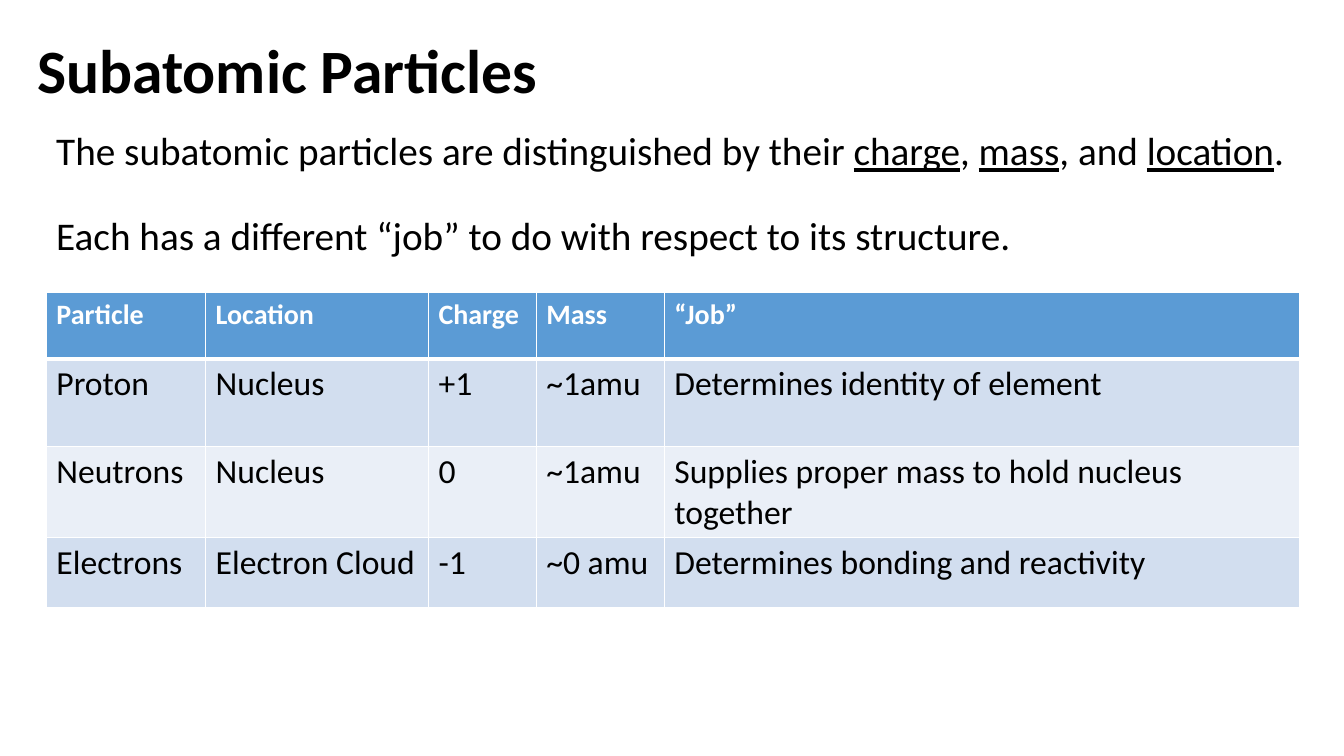
from lxml import etree
from pptx import Presentation
from pptx.dml.color import RGBColor
from pptx.enum.text import MSO_ANCHOR, PP_ALIGN
from pptx.oxml.ns import qn
from pptx.util import Inches, Pt

MIDDLE, TOP = MSO_ANCHOR.MIDDLE, MSO_ANCHOR.TOP
LEFT = PP_ALIGN.LEFT

BLACK, WHITE = "000000", "FFFFFF"
HEADER_BLUE = "5B9BD5"
BANDS = ("D2DEEF", "EAEFF7")

# Each statement is a list of (wording, underlined) pieces
STATEMENTS = [
    [("The subatomic particles are distinguished by their ", False),
     ("charge", True), (", ", False), ("mass", True), (", and ", False),
     ("location", True), (".", False)],
    [("Each has a different “job” to do with respect to its structure.", False)],
]
PARTICLES = [
    ("Particle", "Location", "Charge", "Mass", "“Job”"),
    ("Proton", "Nucleus", "+1", "~1amu", "Determines identity of element"),
    ("Neutrons", "Nucleus", "0", "~1amu",
     "Supplies proper mass to hold nucleus together"),
    ("Electrons", "Electron Cloud", "-1", "~0 amu",
     "Determines bonding and reactivity"),
]
COLUMN_WEIGHTS = (1.58, 2.21, 1.07, 1.27, 6.3)
ROW_WEIGHTS = (0.66, 0.87, 0.85, 0.7)


def colour(hex_value):
    return RGBColor.from_string(hex_value)


def add_run(paragraph, wording, shade=BLACK, **style):
    run = paragraph.add_run()
    run.text = wording
    run.font.color.rgb = colour(shade)
    for name, value in {"name": "Calibri", **style}.items():
        setattr(run.font, name, value)


def add_text_frame(slide, box, anchor):
    frame = slide.shapes.add_textbox(*map(Inches, box)).text_frame
    frame.word_wrap = True
    frame.vertical_anchor = anchor
    return frame


def set_border(cell, side, points):
    line = etree.SubElement(cell._tc.get_or_add_tcPr(), qn(f"a:ln{side}"),
                            w=str(Pt(points)))
    fill = etree.SubElement(line, qn("a:solidFill"))
    etree.SubElement(fill, qn("a:srgbClr"), val=WHITE)


def add_title(slide, box):
    paragraph = add_text_frame(slide, box, MIDDLE).paragraphs[0]
    paragraph.alignment = LEFT
    paragraph.line_spacing = 0.9
    add_run(paragraph, "Subatomic Particles", size=Pt(44), bold=True)


def add_statements(slide, box):
    frame = add_text_frame(slide, box, TOP)
    for index, pieces in enumerate(STATEMENTS):
        paragraph = frame.add_paragraph() if index else frame.paragraphs[0]
        paragraph.alignment = LEFT
        paragraph.line_spacing = 0.9
        if index:
            paragraph.space_before = Pt(30)
        for wording, underlined in pieces:
            add_run(paragraph, wording, size=Pt(28), underline=underlined)


def add_particle_table(slide, box):
    width, height = box[2:]
    table = slide.shapes.add_table(len(PARTICLES), len(COLUMN_WEIGHTS),
                                   *map(Inches, box)).table
    for column, weight in zip(table.columns, COLUMN_WEIGHTS):
        column.width = Inches(width * weight / sum(COLUMN_WEIGHTS))
    for row, weight in zip(table.rows, ROW_WEIGHTS):
        row.height = Inches(height * weight / sum(ROW_WEIGHTS))

    for r, facts in enumerate(PARTICLES):
        is_header = r == 0
        # The rule below the header is thicker than the others
        borders = {"L": 1, "R": 1, "T": 3 if r == 1 else 1,
                   "B": 3 if is_header else 1}
        for c, fact in enumerate(facts):
            cell = table.cell(r, c)
            for side, points in borders.items():
                set_border(cell, side, points)
            cell.fill.solid()
            cell.fill.fore_color.rgb = colour(
                HEADER_BLUE if is_header else BANDS[(r - 1) % 2])
            add_run(cell.text_frame.paragraphs[0], fact,
                    WHITE if is_header else BLACK,
                    size=Pt(20 if is_header else 24), bold=is_header)


def main():
    deck = Presentation()
    deck.slide_width, deck.slide_height = Inches(13.33), Inches(7.5)
    slide = deck.slides.add_slide(deck.slide_layouts[6])

    margin, content_width = 0.46, 12.43
    add_title(slide, (0.27, 0, 11.5, 1.45))
    add_statements(slide, (margin, 1.26, content_width, 1.6))
    add_particle_table(slide, (margin, 2.9, content_width, sum(ROW_WEIGHTS)))

    deck.save("out.pptx")


if __name__ == "__main__":
    main()
